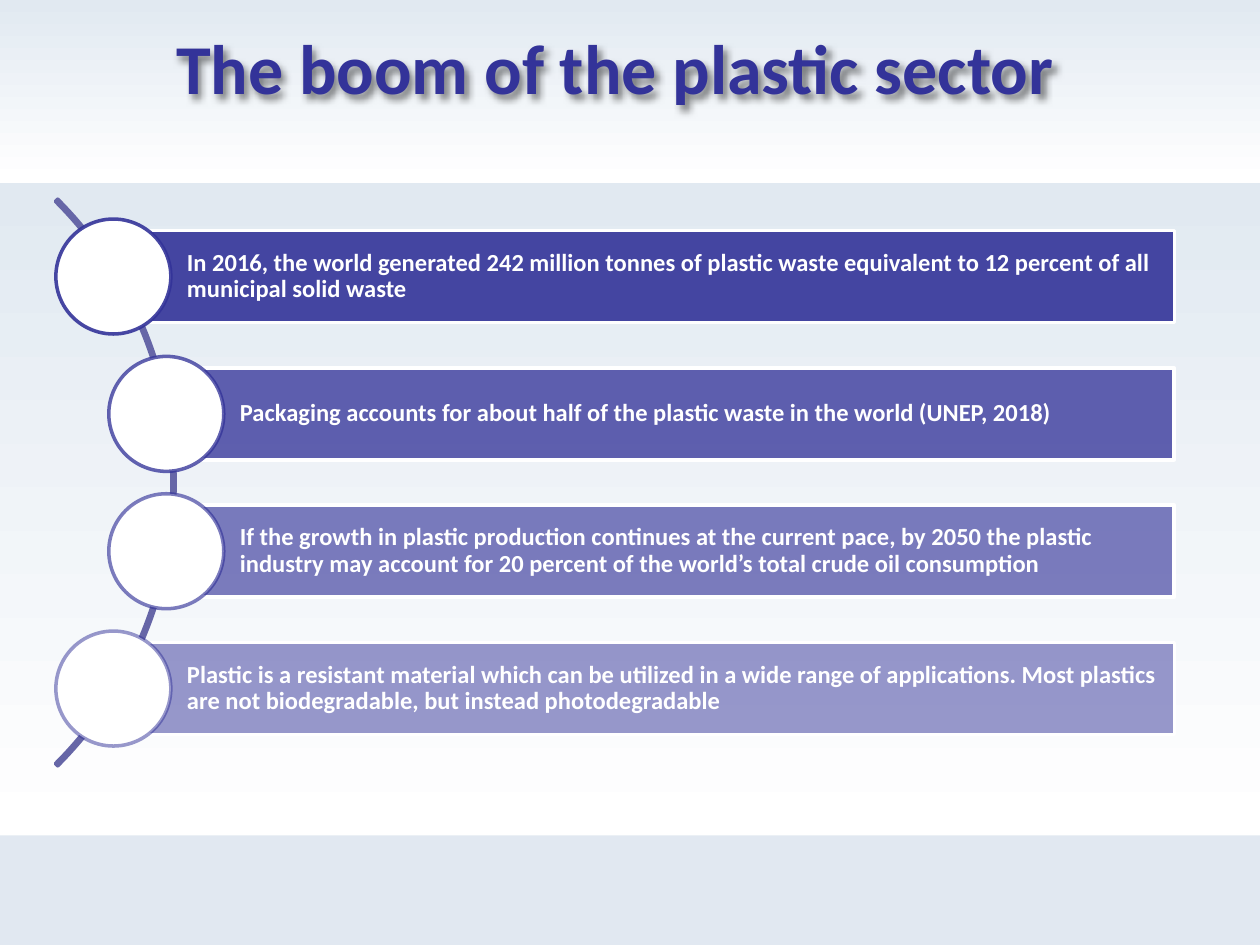
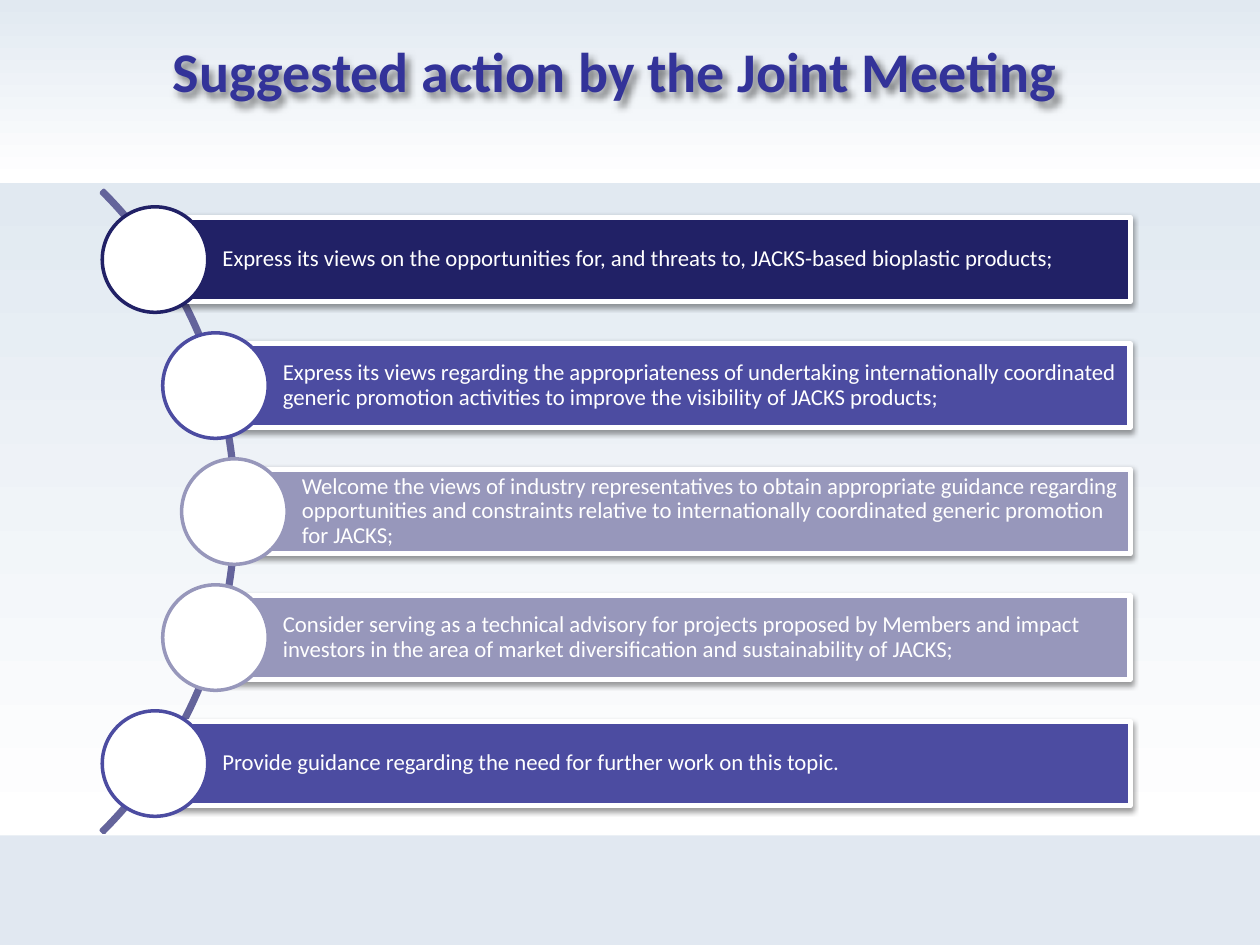
from lxml import etree
from pptx import Presentation
from pptx.dml.color import RGBColor
from pptx.enum.shapes import MSO_SHAPE as Shape
from pptx.enum.text import MSO_ANCHOR as Anchor, PP_ALIGN as Align
from pptx.oxml.ns import qn
from pptx.util import Inches, Pt

FONT = "Calibri"
WHITE, INDIGO, PALE_TOP, PALE_FOOT = "FFFFFF", "333399", "E1E9F1", "E1E8F1"
TITLE_SHADOW = dict(opacity=50, blur=4, distance=3, angle=60)
BAR_SHADOW = dict(opacity=38, blur=3.1, distance=1.6, angle=90)

# Each row: circle centre from the left, colour, opacity in percent, text
BOOM = dict(
    title="The boom of the plastic sector", title_top=0, title_size=40,
    arc_left=-4.97, arc_size=6.36, arc_colour="6666A7", middle=3.83,
    pitch=1.09, bar_height=0.73, bar_right=9.32, bar_line=2, shadow=None,
    text_size=14, bold=True,
    rows=[
        (0.9, INDIGO, 90, "In 2016, the world generated 242 million tonnes of plastic waste "
                          "equivalent to 12 percent of all municipal solid waste"),
        (1.32, INDIGO, 77, "Packaging accounts for about half of the plastic waste in the "
                           "world (UNEP, 2018)"),
        (1.32, INDIGO, 63, "If the growth in plastic production continues at the current pace, "
                           "by 2050 the plastic industry may account for 20 percent of the "
                           "world’s total crude oil consumption"),
        (0.9, INDIGO, 50, "Plastic is a resistant material which can be utilized in a wide "
                          "range of applications. Most plastics are not biodegradable, but "
                          "instead photodegradable"),
    ])
ACTIONS = dict(
    title="Suggested action by the Joint Meeting", title_top=0.03, title_size=32,
    arc_left=-5.33, arc_size=7.21, arc_colour="64649B", middle=4.06,
    pitch=1, bar_height=0.67, bar_right=8.97, bar_line=3, shadow=BAR_SHADOW,
    text_size=13, bold=False,
    rows=[
        (1.23, "212166", 100, "Express its views on the opportunities for, and threats to, "
                              "JACKS-based bioplastic products;"),
        (1.71, "4C4CA1", 100, "Express its views regarding the appropriateness of undertaking "
                              "internationally coordinated generic promotion activities to "
                              "improve the visibility of JACKS products;"),
        (1.86, "9797BB", 100, "Welcome the views of industry representatives to obtain "
                              "appropriate guidance regarding opportunities and constraints "
                              "relative to internationally coordinated generic promotion "
                              "for JACKS;"),
        (1.71, "9797BB", 100, "Consider serving as a technical advisory for projects proposed "
                              "by Members and impact investors in the area of market "
                              "diversification and sustainability of JACKS;"),
        (1.23, "4C4CA1", 100, "Provide guidance regarding the need for further work on this "
                              "topic."),
    ])


def rgb(colour):
    return RGBColor.from_string(colour)


def paint(fill, colour, opacity=100):
    fill.solid()
    fill.fore_color.rgb = rgb(colour)
    if opacity < 100:
        # The fill element is reached from its parent through the colour node
        node = fill._xPr.find(qn("a:solidFill"))[0]
        etree.SubElement(node, qn("a:alpha"), val=str(opacity * 1000))


def add_shadow(shape, opacity, blur, distance, angle):
    shape.shadow.inherit = False
    effects = shape._element.spPr.find(qn("a:effectLst"))
    outer = etree.SubElement(
        effects, qn("a:outerShdw"), blurRad=str(Pt(blur)), dist=str(Pt(distance)),
        dir=str(angle * 60000), algn="ctr", rotWithShape="0")
    colour = etree.SubElement(outer, qn("a:srgbClr"), val="000000")
    etree.SubElement(colour, qn("a:alpha"), val=str(opacity * 1000))


def add_form(page, kind, left, top, width, height):
    """Add a preset shape without fill, outline or shadow."""
    form = page.shapes.add_shape(
        kind, Inches(left), Inches(top), Inches(width), Inches(height))
    form.shadow.inherit = False
    form.fill.background()
    form.line.fill.background()
    return form


def outline(form, colour, width, opacity=100):
    paint(form.line.fill, colour, opacity)
    form.line.width = Pt(width)


def write(box, text, size, colour, bold, align, insets):
    frame = box.text_frame
    frame.word_wrap = True
    frame.vertical_anchor = Anchor.MIDDLE
    (frame.margin_left, frame.margin_top,
     frame.margin_right, frame.margin_bottom) = map(Inches, insets)
    para = frame.paragraphs[0]
    para.alignment = align
    span = para.add_run()
    span.text = text
    span.font.name, span.font.size, span.font.bold = FONT, Pt(size), bold
    span.font.color.rgb = rgb(colour)
    return para


def add_bands(page):
    for top, height in ((0, 1.44), (1.45, 5.18)):
        fill = add_form(page, Shape.RECTANGLE, 0, top, 10, height).fill
        fill.gradient()
        fill.gradient_angle = 270
        for stop, colour in zip(fill.gradient_stops, (PALE_TOP, WHITE)):
            stop.color.rgb = rgb(colour)
    paint(add_form(page, Shape.RECTANGLE, 0, 6.63, 10, 0.87).fill, PALE_FOOT)


def add_title(page, text, top, size):
    box = page.shapes.add_textbox(Inches(0.31), Inches(top), Inches(9.14), Inches(1.05))
    write(box, text, size, INDIGO, True, Align.CENTER, [0.06] * 4)
    add_shadow(box, **TITLE_SHADOW)


def add_arc(page, content):
    size = content["arc_size"]
    arc = add_form(page, Shape.BLOCK_ARC, content["arc_left"],
                   content["middle"] - size / 2, size, size)
    for index, value in enumerate((189, 27, 0.004)):
        arc.adjustments[index] = value
    outline(arc, content["arc_colour"], 2)


def add_row(page, content, centre_y, centre_x, colour, opacity, text):
    height = content["bar_height"]
    bar = add_form(page, Shape.RECTANGLE, centre_x, centre_y - height / 2,
                   content["bar_right"] - centre_x, height)
    paint(bar.fill, colour, opacity)
    outline(bar, WHITE, content["bar_line"])
    if content["shadow"]:
        add_shadow(bar, **content["shadow"])
    para = write(bar, text, content["text_size"], WHITE, content["bold"], Align.LEFT,
                 (height * 0.8, 0.04, 0.04, 0.04))
    para.line_spacing = 0.9

    size = height * 1.25
    circle = add_form(page, Shape.OVAL, centre_x - size / 2, centre_y - size / 2, size, size)
    paint(circle.fill, WHITE)
    outline(circle, colour, 2, opacity)


def add_page(deck, content):
    page = deck.slides.add_slide(deck.slide_layouts[6])
    add_bands(page)
    add_title(page, content["title"], content["title_top"], content["title_size"])
    add_arc(page, content)
    rows = content["rows"]
    first = content["middle"] - (len(rows) - 1) / 2 * content["pitch"]
    for index, row in enumerate(rows):
        add_row(page, content, first + index * content["pitch"], *row)


def main():
    deck = Presentation()
    deck.slide_width, deck.slide_height = Inches(10), Inches(7.5)
    for content in (BOOM, ACTIONS):
        add_page(deck, content)
    deck.save("out.pptx")


if __name__ == "__main__":
    main()
